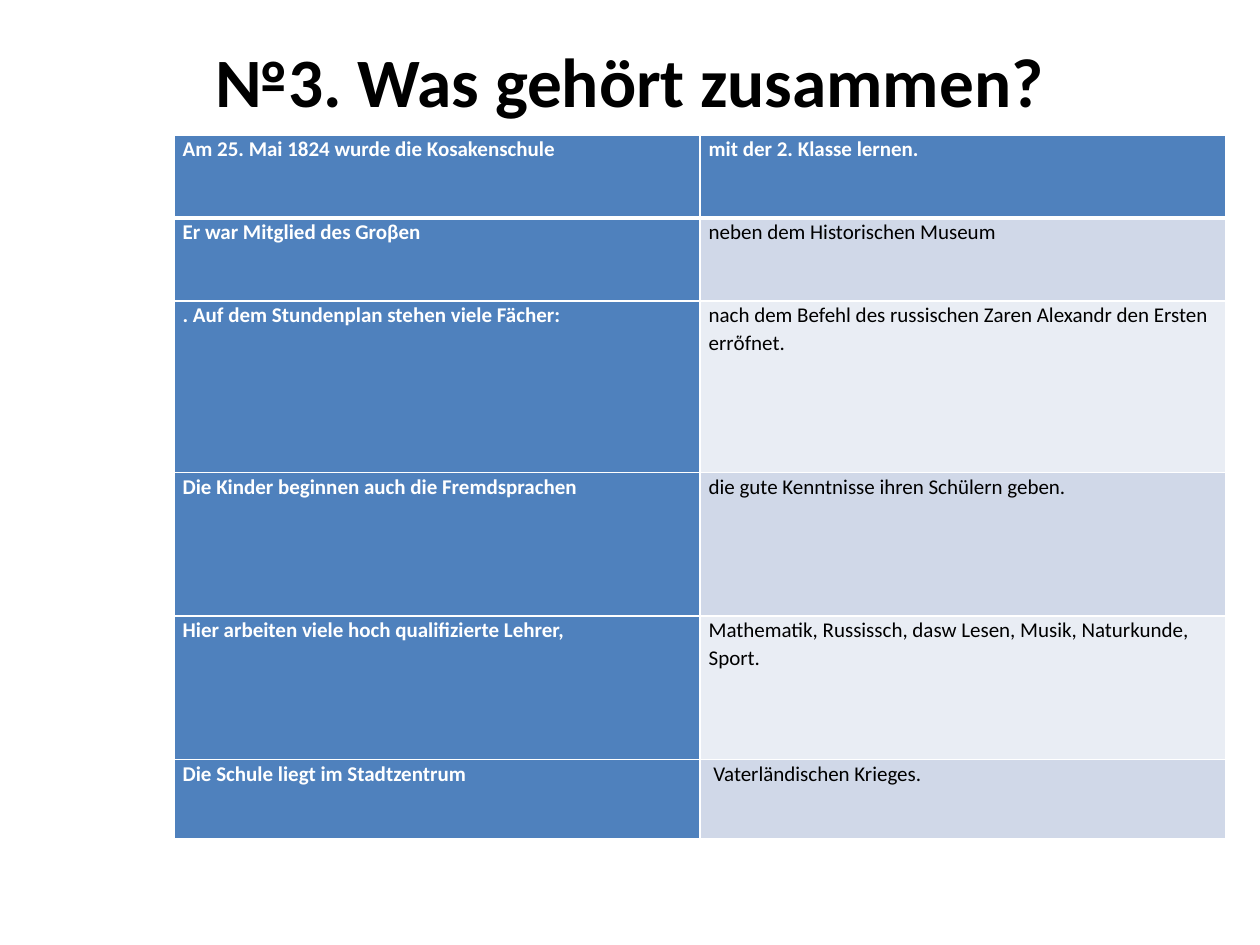
from pptx import Presentation
from pptx.dml.color import RGBColor
from pptx.enum.text import MSO_ANCHOR, PP_ALIGN
from pptx.oxml import parse_xml
from pptx.oxml.ns import nsdecls
from pptx.util import Inches, Pt

COLORS = {"blue": "4F81BD", "band_dark": "D0D8E8", "band_light": "E9EDF4",
          "white": "FFFFFF", "black": "000000"}
ROWS = [
    (0.66, "Am 25. Mai 1824 wurde die Kosakenschule", "mit der 2. Klasse lernen."),
    (0.66, "Er war Mitglied des Groβen", "neben dem Historischen Museum"),
    (1.36, ". Auf dem Stundenplan stehen viele Fächer:",
     "nach dem Befehl des russischen Zaren Alexandr den Ersten errὅfnet."),
    (1.14, "Die Kinder beginnen auch die Fremdsprachen",
     "die gute Kenntnisse ihren Schülern geben."),
    (1.14, "Hier arbeiten viele hoch qualifizierte Lehrer,",
     "Mathematik, Russissch, dasw Lesen, Musik, Naturkunde, Sport."),
    (0.63, "Die Schule liegt im Stadtzentrum", " Vaterländischen Krieges."),
]


def rgb(name):
    return RGBColor.from_string(COLORS[name])


def add_run(p, text, size, color, bold):
    r = p.add_run()
    r.text = text
    for key, value in {"name": "Calibri", "size": Pt(size), "bold": bold}.items():
        setattr(r.font, key, value)
    r.font.color.rgb = rgb(color)


def add_title(s, left, top, width, height):
    tf = s.shapes.add_textbox(left, top, width, height).text_frame
    for key, value in {"word_wrap": True, "margin_top": 0,
                       "vertical_anchor": MSO_ANCHOR.TOP}.items():
        setattr(tf, key, value)
    p = tf.paragraphs[0]
    p.alignment = PP_ALIGN.CENTER
    add_run(p, "№3. Was gehört zusammen?", 39.6, "black", True)


def set_borders(cell, widths):
    """Draw white borders; widths maps L, R, T and B to points."""
    tcPr = cell._tc.get_or_add_tcPr()
    for i, (side, width) in enumerate(widths.items()):
        tcPr.insert(i, parse_xml(
            f'<a:ln{side} {nsdecls("a")} w="{Pt(width)}"><a:solidFill>'
            f'<a:srgbClr val="{COLORS["white"]}"/></a:solidFill></a:ln{side}>'))


def fill_cell(cell, text, fill, strong):
    for key, value in {"margin_left": Inches(0.07), "margin_right": Inches(0.07),
                       "margin_top": 0, "margin_bottom": 0}.items():
        setattr(cell, key, value)
    cell.fill.solid()
    cell.fill.fore_color.rgb = rgb(fill)
    p = cell.text_frame.paragraphs[0]
    p.line_spacing = 1.07
    add_run(p, text, 12, "white" if strong else "black", strong)


def add_matching_table(s, left, top, width, height):
    table = s.shapes.add_table(len(ROWS), 2, left, top, width, height).table
    for column in table.columns:
        column.width = width // 2
    for i, (row_height, *texts) in enumerate(ROWS):
        table.rows[i].height = Inches(row_height)
        for j, text in enumerate(texts):
            strong = i == 0 or j == 0
            band = "band_dark" if i % 2 else "band_light"
            cell = table.cell(i, j)
            fill_cell(cell, text, "blue" if strong else band, strong)
            set_borders(cell, {"L": 1, "R": 1, "T": 3 if i == 1 else 1,
                               "B": 3 if i == 0 else 1})


def main():
    prs = Presentation()
    prs.slide_width, prs.slide_height = Inches(10), Inches(7.5)
    s = prs.slides.add_slide(prs.slide_layouts[6])
    add_title(s, Inches(0.5), Inches(0.3), Inches(9), Inches(1.25))
    add_matching_table(s, Inches(1.38), Inches(1.07), Inches(8.35), Inches(5.59))
    prs.save("out.pptx")


if __name__ == "__main__":
    main()
